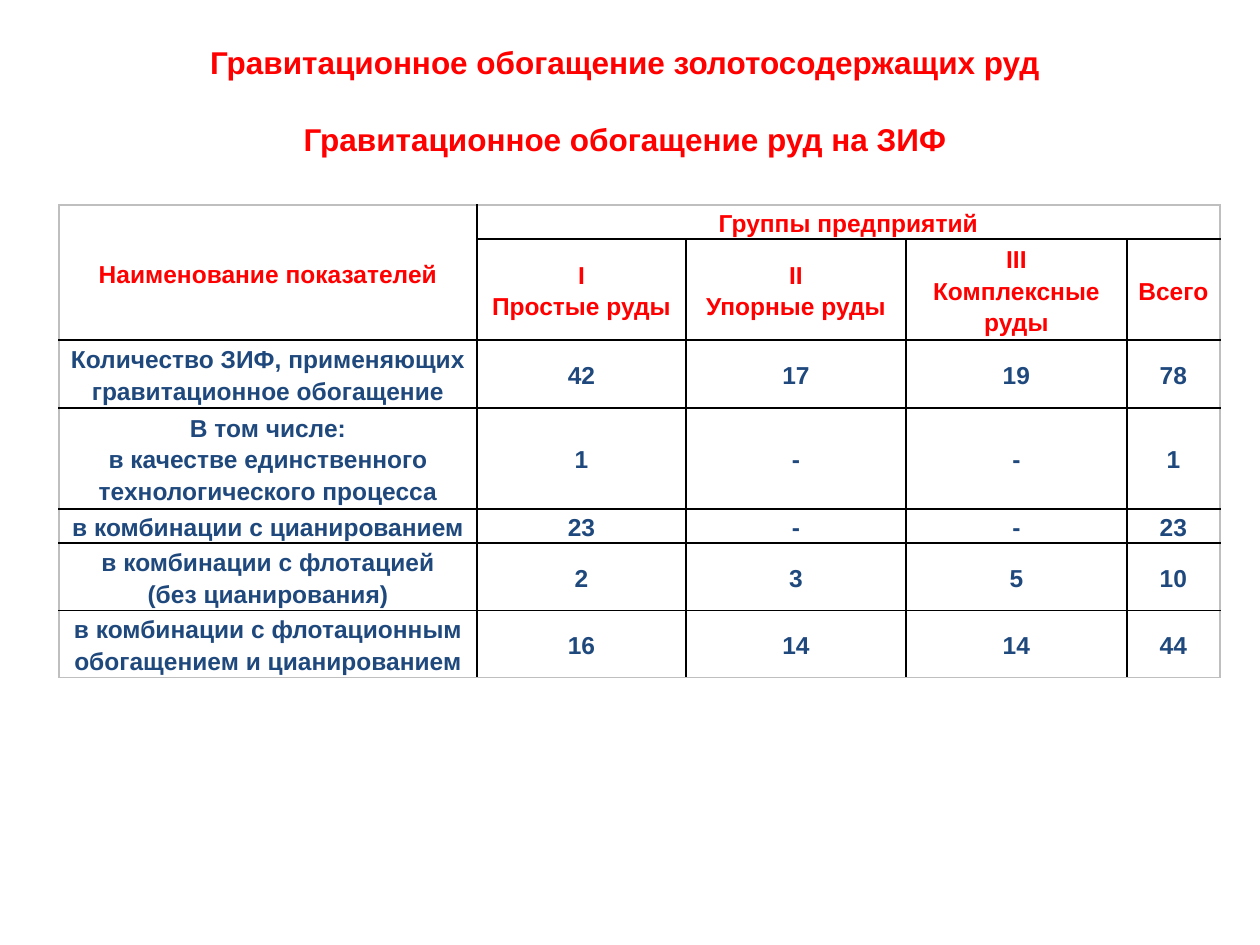
from lxml import etree
from pptx import Presentation
from pptx.dml.color import RGBColor
from pptx.enum.text import MSO_ANCHOR, MSO_AUTO_SIZE, PP_ALIGN
from pptx.oxml.ns import qn
from pptx.util import Pt

CENTER = PP_ALIGN.CENTER
TOP, MIDDLE = MSO_ANCHOR.TOP, MSO_ANCHOR.MIDDLE
PX = 914400 // 126
RED, NAVY, BLACK, GREY = "FF0000", "1F497D", "000000", "BFBFBF"


def format_text(frame, size, color):
    for para in frame.paragraphs:
        para.alignment = CENTER
        for span in para.runs:
            span.font.name = "Arial"
            span.font.size = Pt(size)
            span.font.bold = True
            span.font.color.rgb = RGBColor.from_string(color)


def add_border(cell, side, color):
    line = etree.SubElement(cell._tc.get_or_add_tcPr(), qn(f"a:{side}"), w=str(Pt(1)))
    fill = etree.SubElement(line, qn("a:solidFill"))
    etree.SubElement(fill, qn("a:srgbClr"), val=color)


deck = Presentation()
deck.slide_width, deck.slide_height = 1260 * PX, 945 * PX
page = deck.slides.add_slide(deck.slide_layouts[5])

# Title in two lines
title = page.shapes.title
title.left, title.top, title.width, title.height = 35 * PX, 37 * PX, 1180 * PX, 127 * PX
frame = title.text_frame
frame.text = "Гравитационное обогащение золотосодержащих руд\nГравитационное обогащение руд на ЗИФ"
frame.word_wrap = True
frame.auto_size = MSO_AUTO_SIZE.NONE
frame.vertical_anchor = TOP
frame.paragraphs[1].space_before = Pt(22)
format_text(frame, 18, RED)

# Table contents: \n starts a paragraph, \v breaks a line
rows = [
    ["Наименование показателей", "Группы предприятий", "", "", ""],
    ["", "I\vПростые руды", "II\vУпорные руды", "III\vКомплексные руды", "Всего"],
    ["Количество ЗИФ, применяющих\vгравитационное обогащение", "42", "17", "19", "78"],
    ["В том числе:\nв качестве единственного\nтехнологического процесса", "1", "-", "-", "1"],
    ["в комбинации с цианированием", "23", "-", "-", "23"],
    ["в комбинации с флотацией\n(без цианирования)", "2", "3", "5", "10"],
    ["в комбинации с флотационным\nобогащением и цианированием", "16", "14", "14", "44"],
]
widths = [418, 209, 220, 221, 93]
heights = [34, 101, 68, 101, 34, 68, 67]

# Table grid
table = page.shapes.add_table(
    len(rows), len(widths), 59 * PX, 205 * PX, sum(widths) * PX, sum(heights) * PX
).table
table.first_row = table.horz_banding = False
for column, width in zip(table.columns, widths):
    column.width = width * PX
for row, height in zip(table.rows, heights):
    row.height = height * PX
table.cell(0, 0).merge(table.cell(1, 0))
table.cell(0, 1).merge(table.cell(0, 4))

# Cell text, grey outer frame and black inner lines
for r, values in enumerate(rows):
    for c, value in enumerate(values):
        cell = table.cell(r, c)
        cell.margin_left = cell.margin_right = 9 * PX
        cell.margin_top = cell.margin_bottom = 0
        cell.vertical_anchor = MIDDLE
        if value:
            cell.text = value
            format_text(cell.text_frame, 14, RED if r < 2 else NAVY)
            for para in cell.text_frame.paragraphs:
                para.line_spacing = 1.15
        outer = {
            "lnL": c == 0,
            "lnR": c + cell.span_width == len(widths),
            "lnT": r == 0,
            "lnB": r + cell.span_height == len(rows),
        }
        for side, is_outer in outer.items():
            add_border(cell, side, GREY if is_outer else BLACK)
        cell.fill.background()

deck.save("out.pptx")
